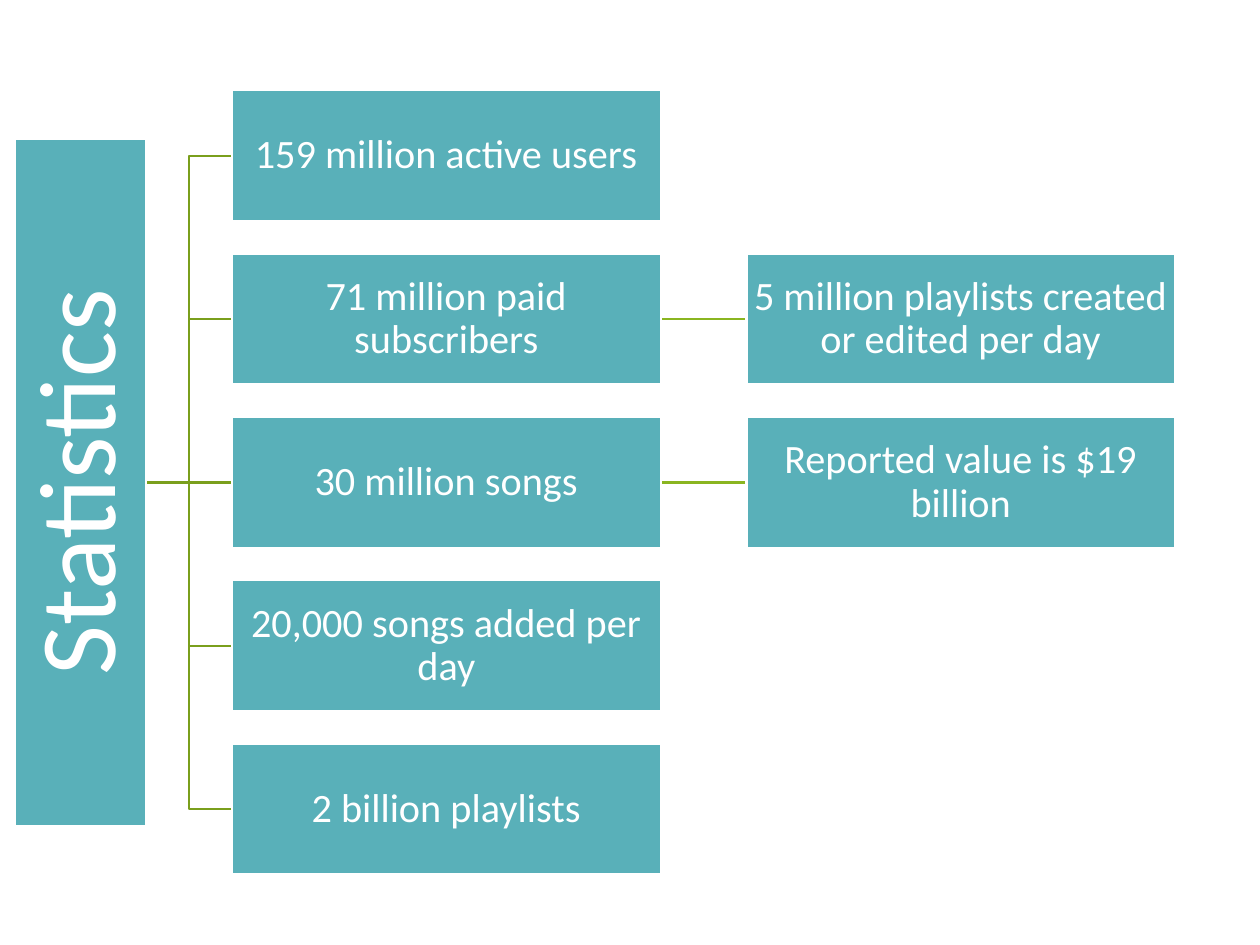
from dataclasses import dataclass

from lxml.etree import SubElement
from pptx import Presentation
from pptx.dml.color import RGBColor
from pptx.enum.shapes import MSO_CONNECTOR as CONN, MSO_SHAPE as SHAPE
from pptx.enum.text import MSO_ANCHOR as ANCHOR, PP_ALIGN as ALIGN
from pptx.oxml.ns import qn
from pptx.util import Cm, Pt


@dataclass(frozen=True)
class Theme:
    """Colours, type and line sizes of the slide."""
    node: RGBColor = RGBColor(0x59, 0xB0, 0xB9)
    white: RGBColor = RGBColor(0xFF, 0xFF, 0xFF)
    trunk: RGBColor = RGBColor(0x7A, 0x9F, 0x1C)
    twig: RGBColor = RGBColor(0x8A, 0xB5, 0x20)
    font: str = "Calibri"
    root_size: int = 62
    node_size: int = 23
    line: float = 1.25


THEME = Theme()
ROOT = "Statistics"
BRANCHES = [
    ("159 million active users", None),
    ("71 million paid subscribers", "5 million playlists created or edited per day"),
    ("30 million songs", "Reported value is $19 billion"),
    ("20,000 songs added per day", None),
    ("2 billion playlists", None),
]
ROOT_LENGTH, NODE_W, NODE_H, COLUMN_GAP = 13.87, 8.64, 2.64, 1.73


def add_node(s, text, x, y, w, h, size, inset):
    """Add a filled rectangle with centred text and return it."""
    sp = s.shapes.add_shape(SHAPE.RECTANGLE, Cm(x), Cm(y), Cm(w), Cm(h))
    sp.shadow.inherit = False
    sp.fill.solid()
    sp.fill.fore_color.rgb = THEME.node
    sp.line.color.rgb = THEME.white
    sp.line.width = Pt(THEME.line)
    tf = sp.text_frame
    tf.word_wrap = True
    tf.vertical_anchor = ANCHOR.MIDDLE
    tf.margin_left = tf.margin_right = tf.margin_top = tf.margin_bottom = Cm(inset)
    tf.text = text
    p = tf.paragraphs[0]
    p.alignment = ALIGN.CENTER
    p.line_spacing = 0.9
    font = p.runs[0].font
    font.name, font.size, font.color.rgb = THEME.font, Pt(size), THEME.white
    return sp


def add_link(s, x1, y1, x2, y2, color):
    """Add a connector, bent halfway when its ends differ in height."""
    kind = CONN.STRAIGHT if y1 == y2 else CONN.ELBOW
    link = s.shapes.add_connector(kind, Cm(x1), Cm(y1), Cm(x2), Cm(y2))
    link.line.color.rgb = color
    link.line.width = Pt(THEME.line)
    SubElement(link._element.spPr, qn("a:effectLst"))


def add_tree(s, x, y, w, h):
    """Draw the horizontal hierarchy inside the given box."""
    middle = y + h / 2
    root_right = x + NODE_H
    branch_x = root_right + COLUMN_GAP
    branch_right = branch_x + NODE_W
    leaf_x = x + w - NODE_W
    pitch = (h - NODE_H) / (len(BRANCHES) - 1)
    centres = [middle + (i - (len(BRANCHES) - 1) / 2) * pitch
               for i in range(len(BRANCHES))]

    for (_, leaf), cy in zip(BRANCHES, centres):
        add_link(s, root_right, middle, branch_x, cy, THEME.trunk)
        if leaf:
            add_link(s, branch_right, cy, leaf_x, cy, THEME.twig)

    root = add_node(s, ROOT, x + (NODE_H - ROOT_LENGTH) / 2, middle - NODE_H / 2,
                    ROOT_LENGTH, NODE_H, THEME.root_size, 0.1)
    root.rotation = 270
    for (branch, leaf), cy in zip(BRANCHES, centres):
        for text, left in ((branch, branch_x), (leaf, leaf_x)):
            if text:
                add_node(s, text, left, cy - NODE_H / 2, NODE_W, NODE_H,
                         THEME.node_size, 0.04)


def main():
    """Build and save the presentation."""
    prs = Presentation()
    prs.slide_width, prs.slide_height = Cm(25.4), Cm(19.05)
    s = prs.slides.add_slide(prs.slide_layouts[6])
    add_tree(s, 0.31, 1.82, 23.38, 15.81)
    prs.save("out.pptx")


if __name__ == "__main__":
    main()
